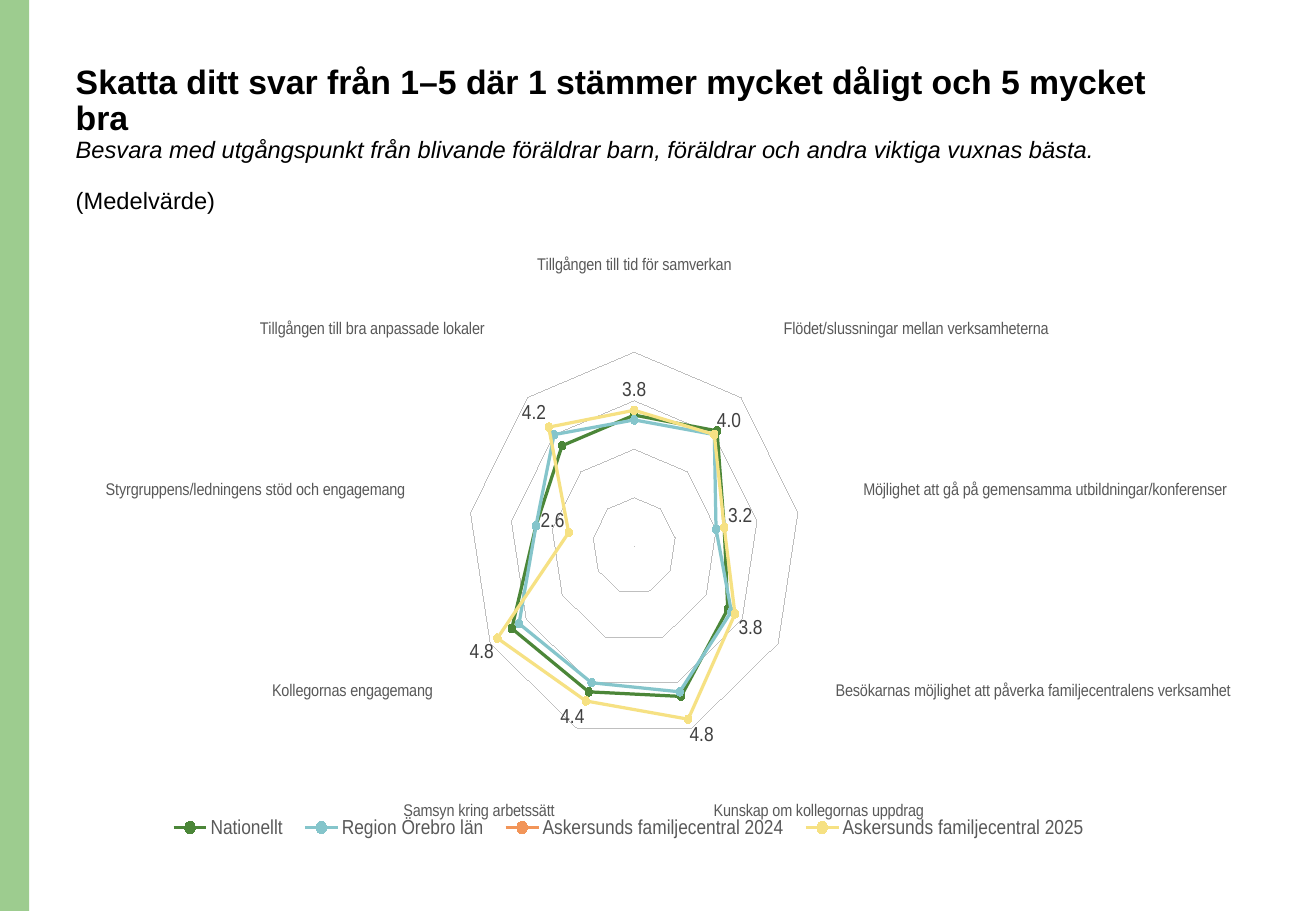
"""Builds a slide with a radar chart of mean survey scores."""
from copy import deepcopy

from lxml import etree
from pptx import Presentation
from pptx import util as u
from pptx.chart.data import CategoryChartData
from pptx.dml.color import RGBColor
from pptx.enum import chart as charts, shapes, text
from pptx.oxml import ns

WIDTH, HEIGHT = u.Inches(10.83), u.Inches(7.5)
FONT = "Arial"
HAIRLINE = 0.01
BLACK = RGBColor(0x00, 0x00, 0x00)
BAR_GREEN = RGBColor(0x9D, 0xCC, 0x8F)
LABEL_GREY = RGBColor(0x59, 0x59, 0x59)
VALUE_GREY = RGBColor(0x40, 0x40, 0x40)
RING_GREY = RGBColor(0xBF, 0xBF, 0xBF)
GRID_GREY = RGBColor(0xD9, 0xD9, 0xD9)
DARK_GREEN = RGBColor(0x4B, 0x86, 0x38)
TEAL = RGBColor(0x85, 0xC5, 0xCB)
ORANGE = RGBColor(0xF2, 0x95, 0x59)
YELLOW = RGBColor(0xF6, 0xE1, 0x83)

CATEGORIES = [
    "Tillgången till tid för samverkan",
    "Tillgången till bra anpassade lokaler",
    "Styrgruppens/ledningens stöd och engagemang",
    "Kollegornas engagemang",
    "Samsyn kring arbetssätt",
    "Kunskap om kollegornas uppdrag",
    "Besökarnas möjlighet att påverka familjecentralens verksamhet",
    "Möjlighet att gå på gemensamma utbildningar/konferenser",
    "Flödet/slussningar mellan verksamheterna",
]
SERIES = [
    ("Nationellt", DARK_GREEN, [3.7, 3.7, 3.4, 4.4, 4.2, 4.3, 3.6, 3.2, 4.1]),
    ("Region Örebro län", TEAL, [3.6, 4, 3.4, 4.2, 4, 4.2, 3.7, 3, 4]),
    ("Askersunds familjecentral 2024", ORANGE, [None] * len(CATEGORIES)),
    ("Askersunds familjecentral 2025", YELLOW,
     [3.8, 4.2, 2.6, 4.8, 4.4, 4.8, 3.8, 3.2, 4]),
]
PLOT_PERCENT = {"x": 29.6, "y": 10.4, "w": 41.9, "h": 81.2}
LEGEND_PERCENT = {"x": 1.5, "y": 92, "w": 97, "h": 8}


def box(left, top, width, height):
    """Turn percentages of the slide into left, top, width and height."""
    return (int(WIDTH * left / 100), int(HEIGHT * top / 100),
            int(WIDTH * width / 100), int(HEIGHT * height / 100))


def set_font(font, size, color, bold=False, italic=False):
    """Give a font its face, size, colour and style."""
    font.name, font.size = FONT, u.Pt(size)
    font.bold, font.italic = bold, italic
    font.color.rgb = color


def set_line(line, color, width):
    """Give a line its colour and width in points."""
    line.color.rgb = color
    line.width = u.Pt(width)


def add_text(paragraph, words, breaks=0, **style):
    """Add a formatted run followed by line breaks of the same size."""
    run = paragraph.add_run()
    run.text = words
    set_font(run.font, color=BLACK, **style)
    for _ in range(breaks):
        paragraph.add_line_break()
        paragraph._p[-1].append(deepcopy(run._r.rPr))


def add_side_bar(slide):
    """Draw the green bar along the left edge."""
    bar = slide.shapes.add_shape(shapes.MSO_SHAPE.RECTANGLE, *box(0, 0, 2.22, 100))
    bar.shadow.inherit = False
    bar.fill.solid()
    bar.fill.fore_color.rgb = BAR_GREEN
    bar.line.fill.background()


def fill_title(slide):
    """Move the title and write the question with its instruction."""
    title = slide.shapes.title
    title.left, title.top, title.width, title.height = box(4.83, 6.46, 86.24, 14.4)
    frame = title.text_frame
    frame.word_wrap = True
    frame.auto_size = text.MSO_AUTO_SIZE.NONE
    frame.vertical_anchor = text.MSO_ANCHOR.TOP
    paragraph = frame.paragraphs[0]
    paragraph.alignment = text.PP_ALIGN.LEFT
    paragraph.line_spacing = 0.9
    add_text(paragraph, "Skatta ditt svar från 1–5 där 1 stämmer mycket dåligt och 5 mycket bra",
             breaks=1, size=20, bold=True)
    add_text(paragraph, "Besvara med utgångspunkt från blivande föräldrar barn, "
             "föräldrar och andra viktiga vuxnas bästa. ", breaks=2, size=14, italic=True)
    add_text(paragraph, "(Medelvärde)", size=14)


def place_part(part, position, percent, **modes):
    """Fix a chart part at percentages of the chart."""
    for old in part.findall(ns.qn("c:layout")):
        part.remove(old)
    layout = etree.Element(ns.qn("c:layout"))
    manual = etree.SubElement(layout, ns.qn("c:manualLayout"))
    settings = {**modes, "xMode": "edge", "yMode": "edge"}
    settings.update({key: str(share / 100) for key, share in percent.items()})
    for tag, value in settings.items():
        etree.SubElement(manual, ns.qn("c:" + tag)).set("val", value)
    part.insert(position, layout)


def format_axes(chart):
    """Style the category labels and the rings of the radar."""
    category = chart.category_axis
    category.reverse_order = True
    category.major_tick_mark = charts.XL_TICK_MARK.NONE
    category.has_major_gridlines = True
    set_line(category.major_gridlines.format.line, GRID_GREY, 0.75)
    set_line(category.format.line, BLACK, 0.75)
    set_font(category.tick_labels.font, 10, LABEL_GREY)
    value = chart.value_axis
    value.minimum_scale, value.maximum_scale, value.major_unit = 1, 5.9, 1
    value.has_major_gridlines = True
    set_line(value.major_gridlines.format.line, RING_GREY, HAIRLINE)
    value.visible = False


def format_series(series, color):
    """Give a series its line and round markers."""
    set_line(series.format.line, color, 2.25)
    series.marker.style = charts.XL_MARKER_STYLE.CIRCLE
    series.marker.size = 5
    series.marker.format.fill.solid()
    series.marker.format.fill.fore_color.rgb = color
    set_line(series.marker.format.line, color, 0.75)


def add_radar(slide):
    """Add the radar chart with its legend and value labels."""
    data = CategoryChartData(number_format="#,##0.0")
    data.categories = CATEGORIES
    for name, _, values in SERIES:
        data.add_series(name, values)
    chart = slide.shapes.add_chart(charts.XL_CHART_TYPE.RADAR_MARKERS,
                                   *box(8.03, 24.93, 86.24, 68.67), data).chart
    set_font(chart.font, 10, BLACK)
    chart.has_title = False
    chart.has_legend = True
    chart.legend.position = charts.XL_LEGEND_POSITION.BOTTOM
    chart.legend.include_in_layout = False
    set_font(chart.legend.font, 12, LABEL_GREY)
    plot = chart.plots[0]
    plot.vary_by_categories = False
    for series, (_, color, _) in zip(plot.series, SERIES):
        format_series(series, color)
    labels = plot.series[len(SERIES) - 1].data_labels
    labels.show_value = True
    labels.number_format = "#,##0.0"
    labels.number_format_is_linked = False
    set_font(labels.font, 12, VALUE_GREY)
    format_axes(chart)
    frame = chart._chartSpace.chart
    place_part(frame.plotArea, 0, PLOT_PERCENT, layoutTarget="inner")
    place_part(frame.find(ns.qn("c:legend")), 1, LEGEND_PERCENT)


def main():
    """Build the slide and save it."""
    presentation = Presentation()
    presentation.slide_width, presentation.slide_height = WIDTH, HEIGHT
    slide = presentation.slides.add_slide(presentation.slide_layouts[5])
    add_side_bar(slide)
    fill_title(slide)
    add_radar(slide)
    presentation.save("out.pptx")


if __name__ == "__main__":
    main()
